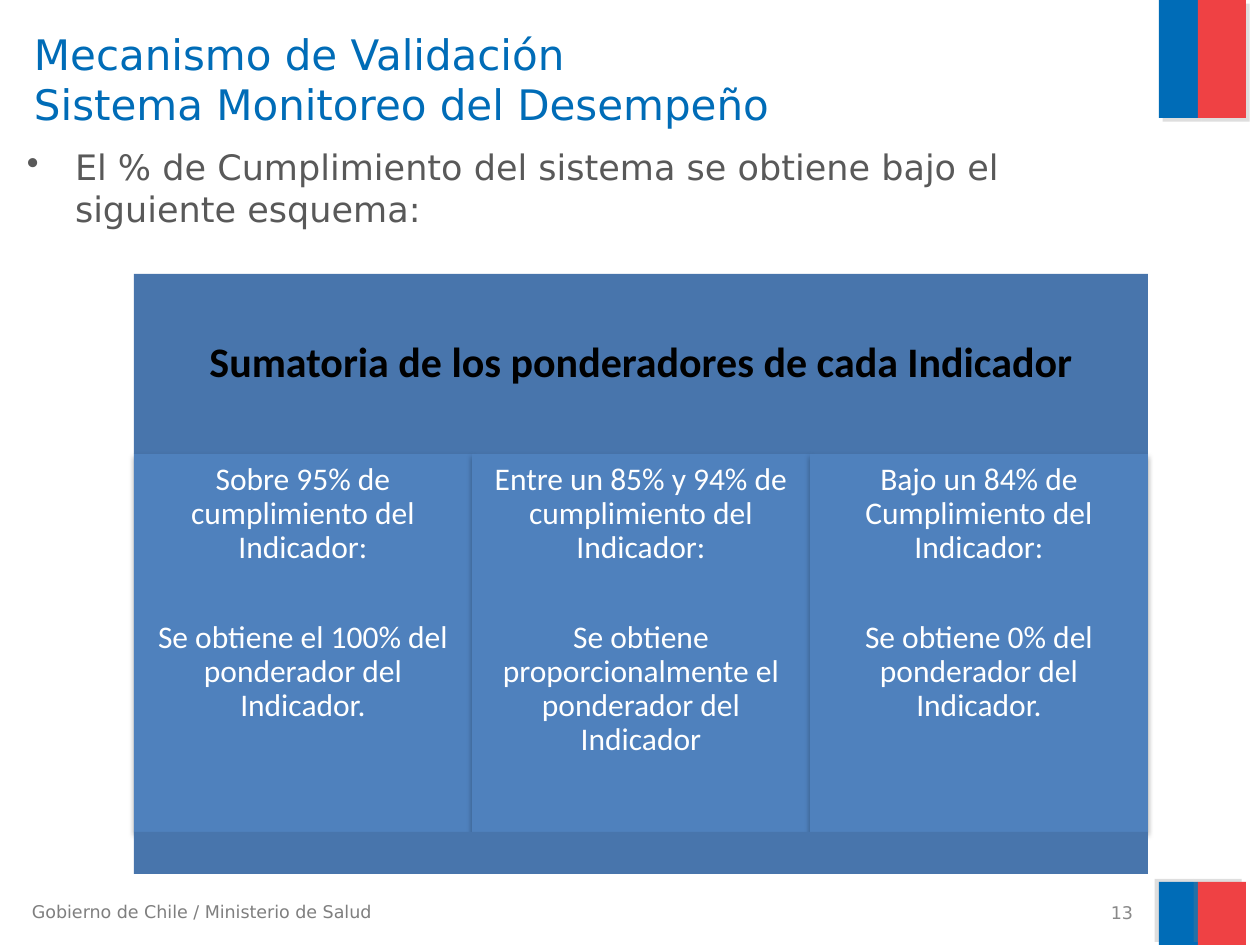
from dataclasses import dataclass
from typing import Optional

from lxml.etree import SubElement
from pptx import Presentation
from pptx.dml.color import RGBColor
from pptx.enum.shapes import MSO_SHAPE
from pptx.enum.text import MSO_ANCHOR, PP_ALIGN
from pptx.oxml.ns import qn
from pptx.util import Emu, Pt

SCALE = 914400 / 126
BLUE = RGBColor(0x00, 0x6C, 0xB7)
RED = RGBColor(0xEF, 0x41, 0x44)
STEEL = RGBColor(0x48, 0x75, 0xAC)
SKY = RGBColor(0x4F, 0x81, 0xBD)
BLACK = RGBColor(0x00, 0x00, 0x00)
WHITE = RGBColor(0xFF, 0xFF, 0xFF)
GRAY = RGBColor(0x80, 0x80, 0x80)
INK = RGBColor(0x59, 0x59, 0x59)
FOOT = RGBColor(0x7F, 0x7F, 0x7F)
PAGE = RGBColor(0x89, 0x89, 0x89)
SANS = "DejaVu Sans"
BODY = "Calibri"


@dataclass(frozen=True)
class Box:
    x: int
    y: int
    w: int
    h: int


@dataclass(frozen=True)
class Shade:
    color: RGBColor
    alpha: int
    blur: float
    dist: float
    angle: int


@dataclass(frozen=True)
class Rule:
    range: str
    result: str


RULES = [
    Rule("Sobre 95% de cumplimiento del Indicador:",
         "Se obtiene el 100% del ponderador del Indicador."),
    Rule("Entre un 85% y 94% de cumplimiento del Indicador:",
         "Se obtiene proporcionalmente el ponderador del Indicador"),
    Rule("Bajo un 84% de Cumplimiento del Indicador:",
         "Se obtiene 0% del ponderador del Indicador."),
]


def px(n: int) -> Emu:
    return Emu(round(n * SCALE))


def place(box: Box) -> list[Emu]:
    return [px(n) for n in (box.x, box.y, box.w, box.h)]


def cast(shape, shade: Shade) -> None:
    effects = shape._element.spPr.find(qn("a:effectLst"))
    outer = SubElement(effects, qn("a:outerShdw"), blurRad=str(Pt(shade.blur)),
                       dist=str(Pt(shade.dist)), dir=str(shade.angle * 60000),
                       algn="ctr", rotWithShape="0")
    color = SubElement(outer, qn("a:srgbClr"), val=str(shade.color))
    SubElement(color, qn("a:alpha"), val=str(shade.alpha * 1000))


def block(slide, box: Box, color: RGBColor, shade: Optional[Shade] = None):
    shape = slide.shapes.add_shape(MSO_SHAPE.RECTANGLE, *place(box))
    shape.shadow.inherit = False
    shape.fill.solid()
    shape.fill.fore_color.rgb = color
    shape.line.fill.background()
    if shade:
        cast(shape, shade)
    return shape


def write(shape, lines: list[str], *, size: int, color: RGBColor, font: str = SANS,
          bold: bool = False, align: PP_ALIGN = PP_ALIGN.LEFT,
          anchor: MSO_ANCHOR = MSO_ANCHOR.TOP, inset: tuple[int, int] = (13, 6),
          lead: float = 1.0, gap: int = 0, bullet: int = 0) -> None:
    frame = shape.text_frame
    frame.word_wrap = True
    frame.vertical_anchor = anchor
    frame.margin_left = frame.margin_right = px(inset[0])
    frame.margin_top = frame.margin_bottom = px(inset[1])
    for i, line in enumerate(lines):
        para = frame.add_paragraph() if i else frame.paragraphs[0]
        para.text = line
        para.alignment = align
        para.line_spacing = lead
        if i:
            para.space_before = Pt(gap)
        for run in para.runs:
            run.font.name = font
            run.font.size = Pt(size)
            run.font.bold = bold
            run.font.color.rgb = color
        if bullet:
            props = para._p.get_or_add_pPr()
            props.set("marL", str(px(bullet)))
            props.set("indent", str(-px(bullet)))
            SubElement(props, qn("a:buChar"), char="•")


def label(slide, box: Box, lines: list[str], **style) -> None:
    write(slide.shapes.add_textbox(*place(box)), lines, **style)


def flag(slide, y: int, h: int, angle: int) -> None:
    shade = Shade(GRAY, 25, 0, 3, angle)
    block(slide, Box(1159, y, 39, h), BLUE, shade)
    block(slide, Box(1198, y, 48, h), RED, shade)


def chart(slide) -> None:
    x, y, w = 134, 274, 1014
    head, mid, base = 180, 378, 42
    title = block(slide, Box(x, y, w, head), STEEL)
    write(title, ["Sumatoria de los ponderadores de cada Indicador"], size=24,
          color=BLACK, font=BODY, bold=True, align=PP_ALIGN.CENTER,
          anchor=MSO_ANCHOR.MIDDLE, lead=0.9)
    shade = Shade(BLACK, 35, 3.1, 1.8, 90)
    step = w // len(RULES)
    for i, rule in enumerate(RULES):
        cell = block(slide, Box(x + i * step, y + head, step, mid), SKY, shade)
        write(cell, [rule.range, rule.result], size=18, color=WHITE, font=BODY,
              align=PP_ALIGN.CENTER, inset=(9, 9), lead=0.9, gap=32)
    block(slide, Box(x, y + head + mid, w, base), STEEL)


def main() -> None:
    deck = Presentation()
    deck.slide_width, deck.slide_height = px(1260), px(945)
    slide = deck.slides.add_slide(deck.slide_layouts[6])
    flag(slide, 0, 118, 45)
    flag(slide, 882, 63, 215)
    label(slide, Box(19, 895, 381, 34), ["Gobierno de Chile / Ministerio de Salud"],
          size=10, color=FOOT)
    label(slide, Box(21, 21, 1125, 115),
          ["Mecanismo de Validación\vSistema Monitoreo del Desempeño"],
          size=24, color=BLUE, anchor=MSO_ANCHOR.MIDDLE)
    label(slide, Box(14, 140, 1126, 91),
          ["El % de Cumplimiento del sistema se obtiene bajo el siguiente esquema:"],
          size=20, color=INK, bullet=48)
    label(slide, Box(852, 900, 294, 26), ["13"], size=10, color=PAGE,
          align=PP_ALIGN.RIGHT, anchor=MSO_ANCHOR.MIDDLE)
    chart(slide)
    deck.save("out.pptx")


if __name__ == "__main__":
    main()
